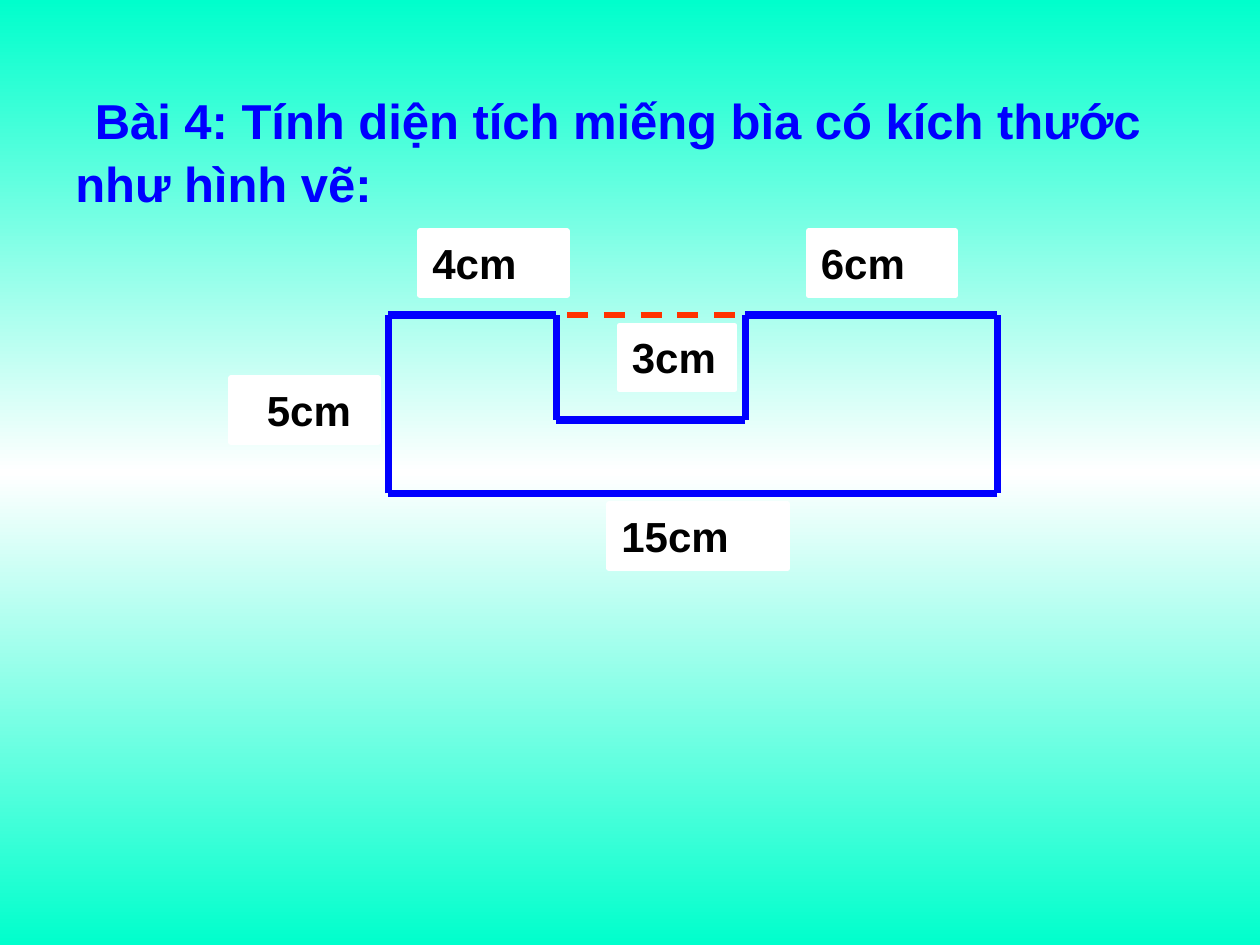
from copy import deepcopy
from itertools import pairwise

from pptx import Presentation
from pptx.dml.color import RGBColor
from pptx.enum.dml import MSO_LINE_DASH_STYLE as DASH
from pptx.enum.shapes import MSO_CONNECTOR, MSO_SHAPE
from pptx.enum.text import MSO_ANCHOR, MSO_AUTO_SIZE, PP_ALIGN
from pptx.oxml.ns import qn
from pptx.util import Pt
from lxml.etree import SubElement

COLORS = {"mint": "00FFCC", "white": "FFFFFF", "blue": "0000FF",
          "red": "FF3300", "black": "000000"}


def color(name):
    return RGBColor.from_string(COLORS[name])


def paint_background(slide):
    fill = slide.background.fill
    fill.gradient()
    fill.gradient_angle = 270
    first = fill.gradient_stops[0]._gs
    first.addnext(deepcopy(first))
    for stop, name, position in zip(fill.gradient_stops, ("mint", "white", "mint"), (0, 0.5, 1)):
        stop.color.rgb = color(name)
        stop.position = position


def format_paragraph(paragraph, size, color_name):
    paragraph.alignment = PP_ALIGN.LEFT
    paragraph.font.name = "Arial"
    paragraph.font.size = Pt(size)
    paragraph.font.bold = True
    paragraph.font.color.rgb = color(color_name)
    spacing = SubElement(paragraph._p.get_or_add_pPr(), qn("a:spcBef"))
    SubElement(spacing, qn("a:spcPct")).set("val", "50000")
    paragraph._p.pPr.insert(0, spacing)


def add_title(slide, text):
    box = slide.shapes.add_textbox(Pt(36), Pt(36), Pt(684), Pt(88.6))
    frame = box.text_frame
    frame.word_wrap = True
    frame.auto_size = MSO_AUTO_SIZE.SHAPE_TO_FIT_TEXT
    paragraph = frame.paragraphs[0]
    indent = paragraph.add_run()
    indent.text = " "
    indent.font.size = Pt(40)
    paragraph.add_run().text = text
    format_paragraph(paragraph, 28, "blue")


def add_label(slide, text, left, top, width, inset=7.2):
    shape = slide.shapes.add_shape(MSO_SHAPE.RECTANGLE, Pt(left), Pt(top), Pt(width), Pt(36.7))
    shape.shadow.inherit = False
    shape.fill.solid()
    shape.fill.fore_color.rgb = color("white")
    shape.line.color.rgb = color("white")
    shape.line.width = Pt(3)
    frame = shape.text_frame
    frame.word_wrap = True
    frame.auto_size = MSO_AUTO_SIZE.SHAPE_TO_FIT_TEXT
    frame.vertical_anchor = MSO_ANCHOR.TOP
    frame.margin_left = Pt(inset)
    paragraph = frame.paragraphs[0]
    paragraph.text = text
    format_paragraph(paragraph, 24, "black")


def add_line(shapes, start, end, color_name, width):
    line = shapes.add_connector(MSO_CONNECTOR.STRAIGHT, *map(Pt, start + end))
    line.line.color.rgb = color(color_name)
    line.line.width = Pt(width)
    SubElement(line._element.spPr, qn("a:effectLst"))
    return line


def add_outline(slide, corners):
    group = slide.shapes.add_group_shape()
    for start, end in pairwise(corners + corners[:1]):
        add_line(group.shapes, start, end, "blue", 4.5)


def main():
    presentation = Presentation()
    presentation.slide_width, presentation.slide_height = Pt(720), Pt(540)
    slide = presentation.slides.add_slide(presentation.slide_layouts[6])
    paint_background(slide)
    add_title(slide, "Bài 4: Tính diện tích miếng bìa có kích thước như hình vẽ:")

    left, notch_left, notch_right, right = 222, 318, 426, 570
    top, notch_bottom, bottom = 180, 240, 282
    add_outline(slide, [(left, top), (notch_left, top), (notch_left, notch_bottom),
                        (notch_right, notch_bottom), (notch_right, top),
                        (right, top), (right, bottom), (left, bottom)])

    add_label(slide, "5cm", 132, 216, 84, inset=20.5)
    add_label(slide, "4cm", 240, 132, 84)
    add_label(slide, "6cm", 462, 132, 84)
    add_label(slide, "3cm", 354, 186, 66)
    add_label(slide, "15cm", 348, 288, 102)

    opening = add_line(slide.shapes, (notch_left + 6, top), (notch_right - 6, top), "red", 3)
    opening.line.dash_style = DASH.DASH
    presentation.save("out.pptx")


if __name__ == "__main__":
    main()
